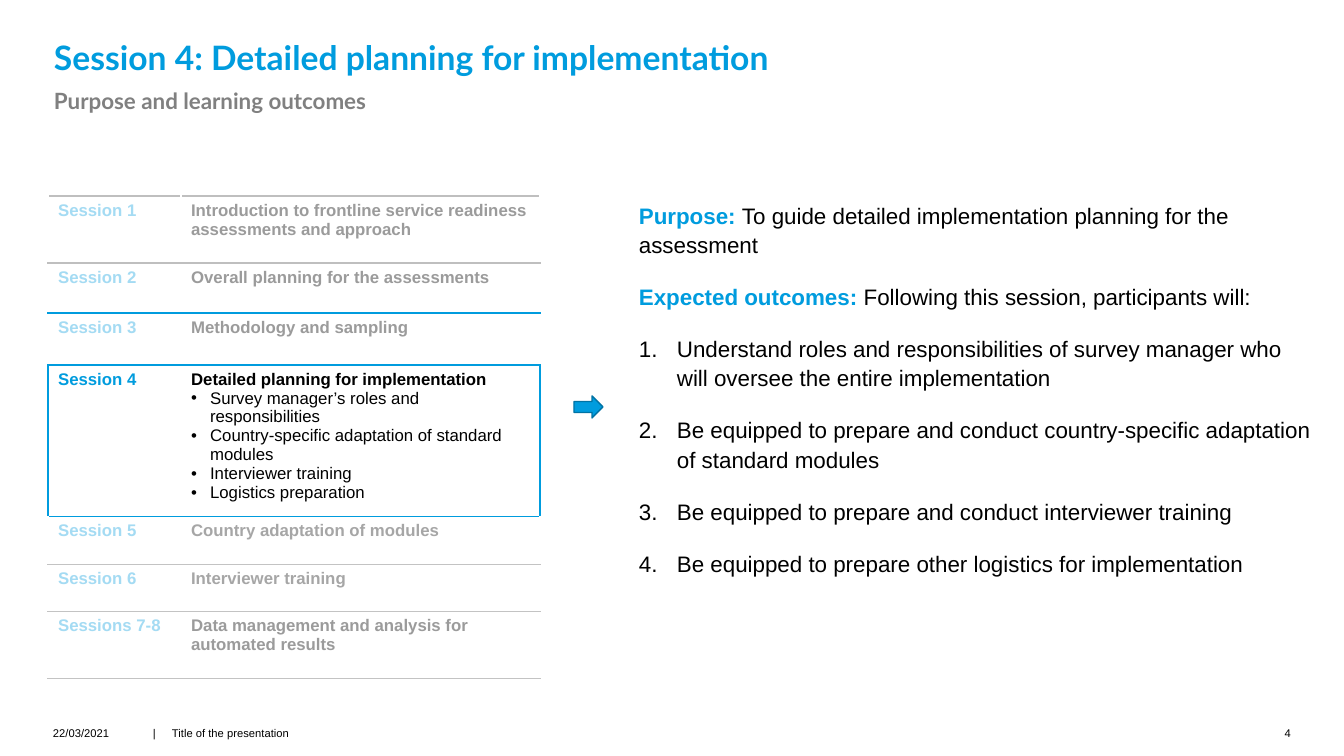
from lxml.etree import SubElement
from pptx import Presentation
from pptx.dml.color import RGBColor
from pptx.enum.shapes import MSO_SHAPE
from pptx.enum.text import MSO_ANCHOR, PP_ALIGN
from pptx.oxml.ns import qn
from pptx.util import Emu, Pt

SCALE = 914400 / 100.8
COLORS = {
    "blue": "009CDE", "pale": "A4DBF3", "edge": "0073A4", "black": "000000",
    "muted": "9B9B9B", "soft": "A6A6A6", "subtitle": "808080",
    "rule": "BFBFBF", "thin": "C3C3C3", "white": "FFFFFF",
}
SESSIONS = [
    ("Session 1", "Introduction to frontline service readiness assessments and approach", "muted", 67),
    ("Session 2", "Overall planning for the assessments", "muted", 50),
    ("Session 3", "Methodology and sampling", "muted", 52),
    ("Session 4", "Detailed planning for implementation", "black", 142),
    ("Session 5", "Country adaptation of modules", "soft", 48),
    ("Session 6", "Interviewer training", "soft", 47),
    ("Sessions 7-8", "Data management and analysis for automated results", "muted", 67),
]
CURRENT = 3
TOPICS = [
    "Survey manager’s roles and responsibilities",
    "Country-specific adaptation of standard modules",
    "Interviewer training",
    "Logistics preparation",
]
RULES = [("rule", 1), ("rule", 1), ("blue", 1), ("blue", 1), ("blue", 1),
         ("thin", 0.75), ("thin", 0.75), ("thin", 0.75)]
INTRO = [
    ("Purpose: ", "To guide detailed implementation planning for the assessment"),
    ("Expected outcomes: ", "Following this session, participants will:"),
]
OUTCOMES = [
    "Understand roles and responsibilities of survey manager who will oversee the entire implementation",
    "Be equipped to prepare and conduct country-specific adaptation of standard modules",
    "Be equipped to prepare and conduct interviewer training",
    "Be equipped to prepare other logistics for implementation",
]


def px(n):
    return Emu(round(n * SCALE))


def rgb(name):
    return RGBColor.from_string(COLORS[name])


def add_run(p, text, size, color, bold=False, font="Arial"):
    r = p.add_run()
    r.text = text
    r.font.size = Pt(size)
    r.font.name = font
    r.font.bold = bold
    r.font.color.rgb = rgb(color)


def next_paragraph(tf):
    return tf.paragraphs[0] if not tf.paragraphs[0].runs else tf.add_paragraph()


def add_marker(p, indent, tag, **attrs):
    pPr = p._p.get_or_add_pPr()
    pPr.set("marL", str(px(indent)))
    pPr.set("indent", str(-px(indent)))
    SubElement(pPr, qn("a:buFont"), typeface="Arial")
    SubElement(pPr, qn(tag), **attrs)


def add_tab(p, pos):
    tabs = SubElement(p._p.get_or_add_pPr(), qn("a:tabLst"))
    SubElement(tabs, qn("a:tab"), pos=str(px(pos)), algn="l")


def add_box(s, x, y, w, h, inset=0, inset_right=0, anchor=MSO_ANCHOR.TOP):
    tf = s.shapes.add_textbox(px(x), px(y), px(w), px(h)).text_frame
    tf.word_wrap = True
    tf.margin_left, tf.margin_right = px(inset), px(inset_right)
    tf.margin_top = tf.margin_bottom = 0
    tf.vertical_anchor = anchor
    return tf


def add_headings(s):
    tf = add_box(s, 52, 39, 899, 39, 2, 39, MSO_ANCHOR.BOTTOM)
    p = tf.paragraphs[0]
    p.line_spacing = 0.9
    add_run(p, "Session 4: Detailed planning for implementation", 24, "blue", True, "Lato")
    tf = add_box(s, 52, 83, 899, 32, 2, 2, MSO_ANCHOR.MIDDLE)
    p = tf.paragraphs[0]
    p.line_spacing = 1.1
    add_run(p, "Purpose and learning outcomes", 16, "subtitle", True, "Lato")


def add_purpose(s):
    tf = add_box(s, 637, 199, 676, 425, 2, 2)
    for label, text in INTRO:
        p = next_paragraph(tf)
        add_run(p, label, 16, "blue", True)
        add_run(p, text, 16, "black")
    for text in OUTCOMES:
        p = next_paragraph(tf)
        add_marker(p, 38, "a:buAutoNum", type="arabicPeriod")
        add_run(p, text, 16, "black")
    for i, p in enumerate(tf.paragraphs):
        p.line_spacing = 1.1
        p.space_before = Pt(10 if i else 0)
        p.space_after = Pt(6)


def set_borders(cell, **sides):
    tcPr = cell._tc.get_or_add_tcPr()
    for side in ("L", "R", "T", "B"):
        color, width = sides[side]
        ln = SubElement(tcPr, qn(f"a:ln{side}"), w=str(Pt(width)))
        fill = SubElement(ln, qn("a:solidFill"))
        SubElement(fill, qn("a:srgbClr"), val=COLORS[color])
    cell.fill.background()


def add_sessions(s):
    heights = [row[3] for row in SESSIONS]
    gf = s.shapes.add_table(len(SESSIONS), 2, px(48), px(196), px(492), px(sum(heights)))
    table = gf.table
    table.first_row = table.horz_banding = False
    for column, width in zip(table.columns, (133, 359)):
        column.width = px(width)
    for i, (label, title, color, height) in enumerate(SESSIONS):
        table.rows[i].height = px(height)
        label_color = "blue" if i == CURRENT else "pale"
        outer = ("blue" if i == CURRENT else "white", 1)
        inner = ("white", 1)
        cells = [(label, label_color, outer, inner), (title, color, inner, outer)]
        for j, (text, text_color, left, right) in enumerate(cells):
            cell = table.cell(i, j)
            add_run(cell.text_frame.paragraphs[0], text, 12, text_color, True)
            set_borders(cell, L=left, R=right, T=RULES[i], B=RULES[i + 1])
    tf = table.cell(CURRENT, 1).text_frame
    for topic in TOPICS:
        p = next_paragraph(tf)
        add_marker(p, 19, "a:buChar", char="•")
        add_run(p, topic, 12, "black")


def add_arrow(s):
    sp = s.shapes.add_shape(MSO_SHAPE.RIGHT_ARROW, px(574), px(396), px(29), px(22))
    sp.shadow.inherit = False
    sp.fill.solid()
    sp.fill.fore_color.rgb = rgb("blue")
    sp.line.color.rgb = rgb("edge")
    sp.line.width = Pt(1)


def add_footer(s):
    add_run(add_box(s, 53, 726, 87, 20).paragraphs[0], "22/03/2021", 8, "black")
    p = add_box(s, 153, 726, 328, 20).paragraphs[0]
    add_tab(p, 19)
    add_run(p, "|\tTitle of the presentation", 8, "black")
    p = add_box(s, 1259, 726, 32, 20).paragraphs[0]
    p.alignment = PP_ALIGN.RIGHT
    add_run(p, "4", 8, "black")


def main():
    prs = Presentation()
    prs.slide_width, prs.slide_height = px(1344), px(756)
    s = prs.slides.add_slide(prs.slide_layouts[6])
    add_headings(s)
    add_sessions(s)
    add_arrow(s)
    add_purpose(s)
    add_footer(s)
    prs.save("out.pptx")


if __name__ == "__main__":
    main()
